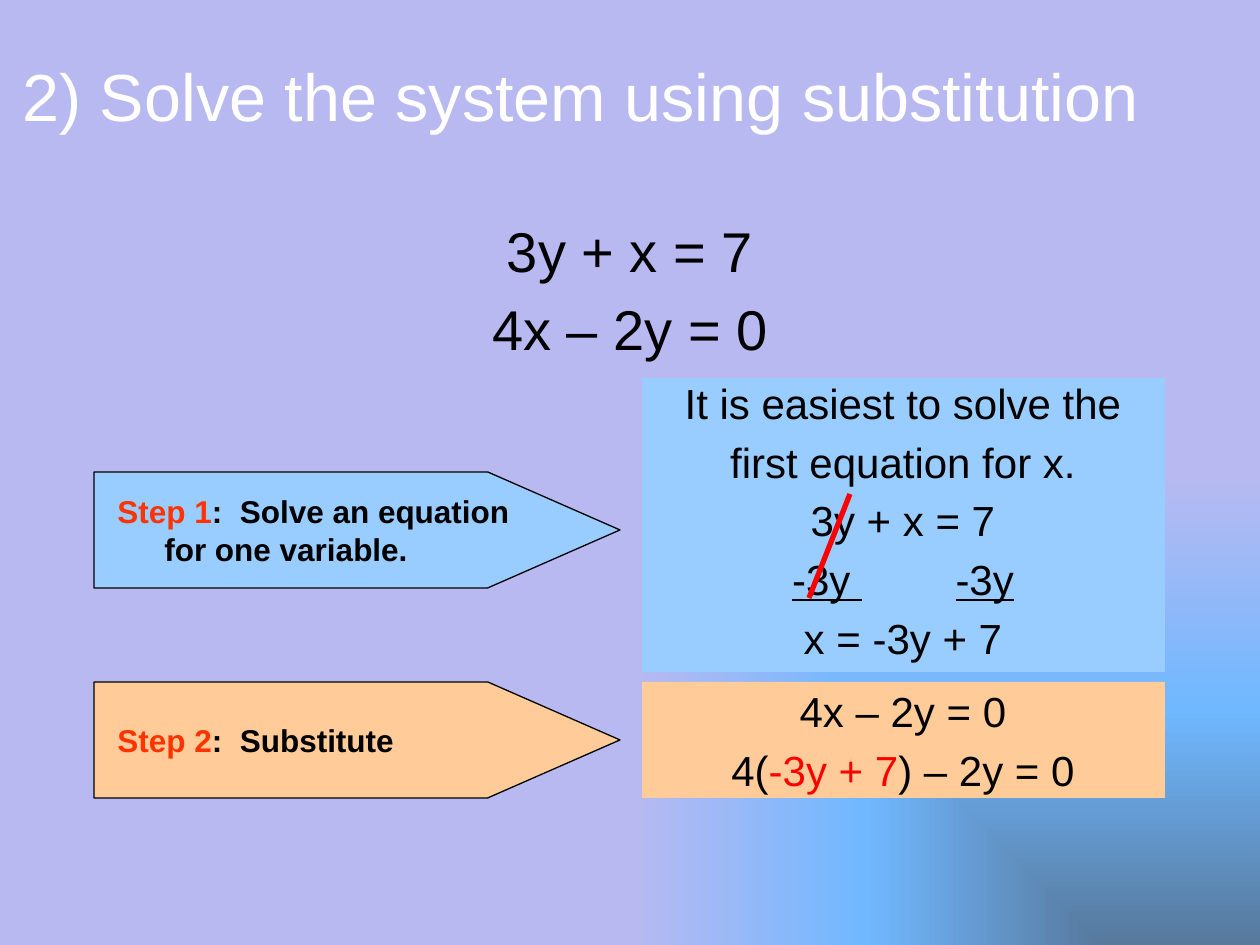
import dataclasses
import typing

import lxml.etree
import pptx
import pptx.dml.color
import pptx.enum.shapes
import pptx.enum.text
import pptx.oxml.ns
import pptx.util

EMU_PER_PX = 914400 / 126
SLIDE_WIDTH, SLIDE_HEIGHT = 1260, 945
HANGING = 47
FONT = "Arial"
COLORS = {
    "title": "FFFFFF",
    "ink": "000000",
    "step": "FF3300",
    "highlight": "FF0000",
    "blue": "99CCFF",
    "orange": "FFCC99",
}
BACKDROP = [(0, "56799C"), (50, "70B8FF"), (100, "B9B9F1")]

Shapes = pptx.enum.shapes.MSO_SHAPE
Align = pptx.enum.text.PP_ALIGN
Anchor = pptx.enum.text.MSO_ANCHOR


class Box(typing.NamedTuple):
    left: int
    top: int
    width: int
    height: int


class Run(typing.NamedTuple):
    text: str
    color: str = "ink"
    bold: bool = False
    underline: bool = False
    tracking: int = 0  # hundredths of a point


@dataclasses.dataclass
class TextBlock:
    box: Box
    size: int
    lines: list[list[Run]]
    align: typing.Any = Align.CENTER
    anchor: typing.Any = Anchor.MIDDLE
    hanging: int = HANGING
    space_before: int = 20  # percent


@dataclasses.dataclass
class Panel:
    preset: typing.Any
    box: Box
    fill: str
    outlined: bool = False


def px(length: float) -> int:
    return round(length * EMU_PER_PX)


def rgb(name: str) -> pptx.dml.color.RGBColor:
    return pptx.dml.color.RGBColor.from_string(COLORS[name])


def add_child(parent, tag: str, **attributes):
    return lxml.etree.SubElement(parent, pptx.oxml.ns.qn(tag), attributes)


def paint_background(slide) -> None:
    slide.background.fill.gradient()
    gradient = slide.element.xpath(".//p:bg//a:gradFill")[0]
    for child in list(gradient):
        gradient.remove(child)
    stops = add_child(gradient, "a:gsLst")
    for percent, color in BACKDROP:
        stop = add_child(stops, "a:gs", pos=str(percent * 1000))
        add_child(stop, "a:srgbClr", val=color)
    center = add_child(gradient, "a:path", path="rect")
    add_child(center, "a:fillToRect", l="100000", t="100000", r="0", b="0")


def draw_panel(slide, panel: Panel) -> None:
    shape = slide.shapes.add_shape(panel.preset, *map(px, panel.box))
    shape.shadow.inherit = False
    shape.fill.solid()
    shape.fill.fore_color.rgb = rgb(panel.fill)
    if panel.preset == Shapes.PENTAGON:
        shape.adjustments[0] = 1.14
    if panel.outlined:
        shape.line.color.rgb = rgb("ink")
        shape.line.width = pptx.util.Pt(0.75)
    else:
        shape.line.fill.background()


def draw_text(slide, block: TextBlock) -> None:
    frame = slide.shapes.add_textbox(*map(px, block.box)).text_frame
    frame.word_wrap = True
    frame.vertical_anchor = block.anchor
    for index, line in enumerate(block.lines):
        paragraph = frame.add_paragraph() if index else frame.paragraphs[0]
        paragraph.alignment = block.align
        properties = paragraph._p.get_or_add_pPr()
        properties.set("marL", str(px(block.hanging)))
        properties.set("indent", str(-px(block.hanging)))
        spacing = add_child(properties, "a:spcBef")
        add_child(spacing, "a:spcPct", val=str(block.space_before * 1000))
        for part in line:
            run = paragraph.add_run()
            run.text = part.text
            run.font.name = FONT
            run.font.size = pptx.util.Pt(block.size)
            run.font.bold = part.bold
            run.font.underline = part.underline
            run.font.color.rgb = rgb(part.color)
            if part.tracking:
                run.font._element.set("spc", str(part.tracking))


def draw_strike(slide, start: tuple[int, int], end: tuple[int, int]) -> None:
    strike = slide.shapes.add_connector(
        pptx.enum.shapes.MSO_CONNECTOR.STRAIGHT, *map(px, start + end)
    )
    strike.line.color.rgb = rgb("highlight")
    strike.line.width = pptx.util.Pt(3)
    add_child(strike._element.spPr, "a:effectLst")


def step_label(top: int, number: int, task: str, space_before: int) -> TextBlock:
    runs = [Run(f"Step {number}", "step", bold=True), Run(f":  {task}", bold=True)]
    return TextBlock(Box(105, top, 451, 94), 18, [runs], align=Align.LEFT,
                     space_before=space_before)


STEP_1_TOP, STEP_2_TOP = 472, 682
PANELS = [
    Panel(Shapes.PENTAGON, Box(94, STEP_1_TOP, 526, 116), "blue", outlined=True),
    Panel(Shapes.RECTANGLE, Box(642, 378, 523, 294), "blue"),
    Panel(Shapes.PENTAGON, Box(94, STEP_2_TOP, 526, 116), "orange", outlined=True),
    Panel(Shapes.RECTANGLE, Box(642, STEP_2_TOP, 523, 116), "orange"),
]
TEXTS = [
    # Title and the system of equations
    TextBlock(Box(10, 32, 1145, 126), 38,
              [[Run("2) Solve the system using substitution", "title")]],
              align=Align.LEFT, hanging=0, space_before=0),
    TextBlock(Box(84, 210, 1092, 640), 32,
              [[Run("3y + x = 7")], [Run("4x – 2y = 0")]], anchor=Anchor.TOP),
    # Step labels
    step_label(STEP_1_TOP + 11, 1, "Solve an equation for one variable.", 20),
    step_label(STEP_2_TOP + 11, 2, "Substitute", 0),
    # Worked steps
    TextBlock(Box(651, 378, 504, 284), 24, [
        [Run("It is easiest to solve the")],
        [Run("first equation for x.")],
        [Run("3y + x = 7")],
        [Run("-3y", underline=True), Run(" ", underline=True, tracking=5340),
         Run("-3y", underline=True)],
        [Run("x = -3y + 7")],
    ]),
    TextBlock(Box(651, 693, 504, 94), 24, [
        [Run("4x – 2y = 0")],
        [Run("4("), Run("-3y + 7", "highlight"), Run(") – 2y = 0")],
    ]),
]


def main() -> None:
    deck = pptx.Presentation()
    deck.slide_width, deck.slide_height = px(SLIDE_WIDTH), px(SLIDE_HEIGHT)
    slide = deck.slides.add_slide(deck.slide_layouts[6])
    paint_background(slide)
    for panel in PANELS:
        draw_panel(slide, panel)
    for block in TEXTS:
        draw_text(slide, block)
    # Cancels the 3y terms
    draw_strike(slide, (850, 494), (809, 598))
    deck.save("out.pptx")


if __name__ == "__main__":
    main()
